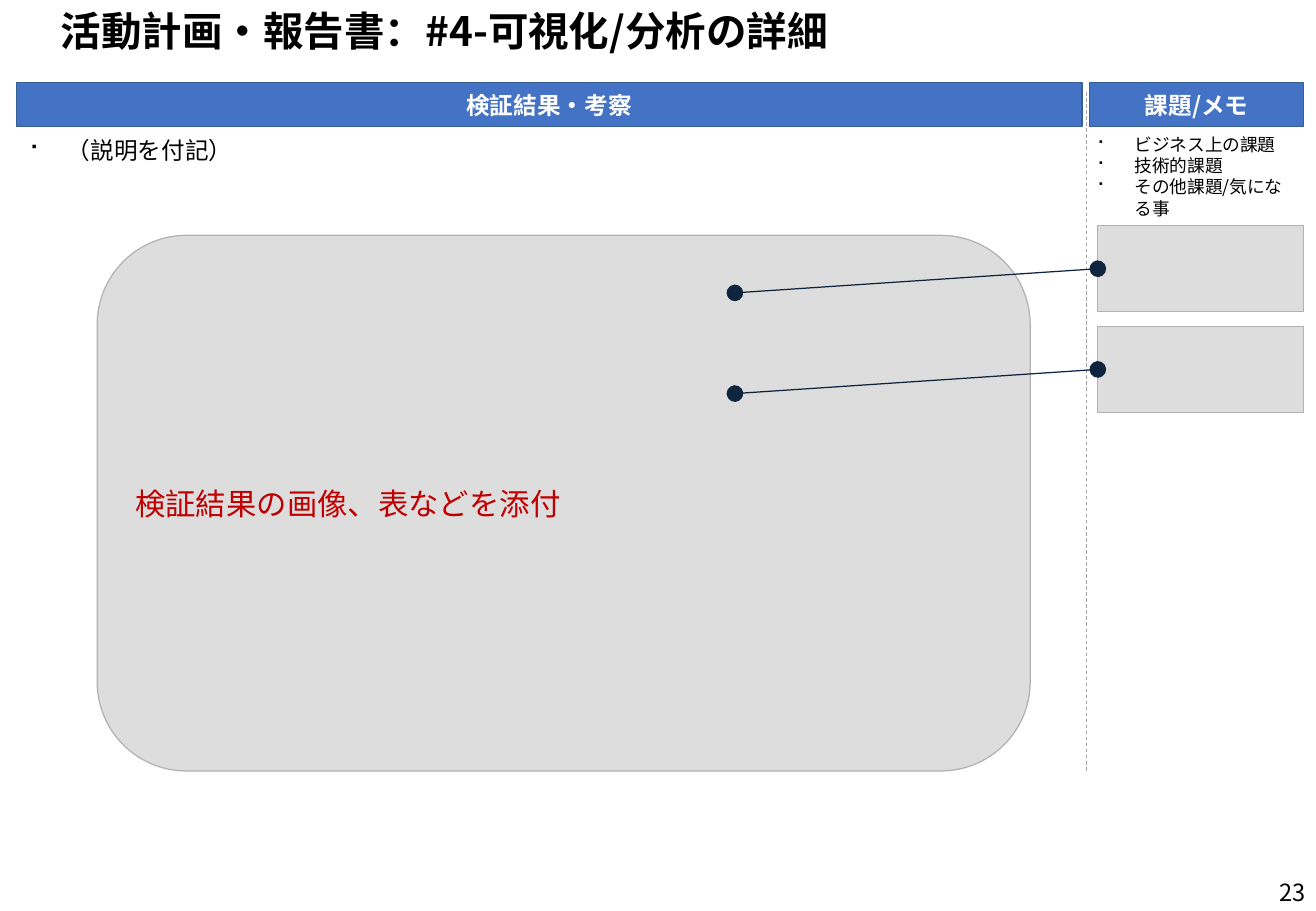
"""Build the slide on visualisation and analysis details."""
from dataclasses import dataclass

from lxml import etree
from pptx import Presentation
from pptx.dml.color import RGBColor
from pptx.enum import dml, shapes, text
from pptx.oxml import ns
from pptx.util import Pt

FACE = "Noto Sans CJK JP"
KIND = shapes.MSO_SHAPE
ALIGN = text.PP_ALIGN
MID = text.MSO_ANCHOR.MIDDLE
TOP = text.MSO_ANCHOR.TOP
STEP = 59.7


@dataclass
class Area:
    left: float
    top: float
    width: float
    height: float


@dataclass
class Words:
    lines: list[str]
    size: float
    color: str = "000000"
    bold: bool = False
    align: ALIGN = ALIGN.LEFT
    anchor: text.MSO_ANCHOR = MID
    wrap: bool = True
    pitch: float = 0


@dataclass
class Panel:
    area: Area
    fill: str
    edge: str
    kind: KIND = KIND.RECTANGLE
    words: Words | None = None


@dataclass
class Label:
    area: Area
    words: Words


def head(left: float, width: float, title: str) -> Panel:
    """Describe a blue column header."""
    words = Words([title], 14, "FFFFFF", True, ALIGN.CENTER)
    return Panel(Area(left, 49, width, 26), "4472C4", "376092", words=words)


RESULT = Panel(Area(57.6, 139.5, 553, 317.5), "DDDDDD", "B2B2B2", KIND.ROUNDED_RECTANGLE,
               Words(["検証結果の画像、表などを添付"], 18, "C00000", wrap=False))
NOTES = [Panel(Area(650.7, 133.7 + STEP * row, 122, 51.2), "DDDDDD", "B2B2B2")
         for row in range(2)]
HEADS = [head(645.8, 127, "課題/メモ"), head(9.8, 631.5, "検証結果・考察")]
LABELS = [
    Label(Area(599, 514, 182.2, 29), Words(["23"], 14, align=ALIGN.RIGHT)),
    Label(Area(5, 0, 770, 36), Words(["　活動計画・報告書：#4-可視化/分析の詳細"], 24, bold=True)),
    Label(Area(10, 75.6, 596, 41), Words(["（説明を付記）"], 14, anchor=TOP, pitch=18)),
    Label(Area(643, 75.6, 132.5, 58.3),
          Words(["ビジネス上の課題", "技術的課題", "その他課題/気になる事"], 10.5,
                anchor=TOP, pitch=12.6)),
]


def paint(code: str) -> RGBColor:
    """Turn a hex string into a colour."""
    return RGBColor.from_string(code)


def child(base, tag: str, **attrs: str) -> None:
    """Append a DrawingML element."""
    etree.SubElement(base, ns.qn(tag), attrs)


def write(frame, words: Words) -> None:
    """Fill a text frame, with bullets where a line pitch is given."""
    frame.word_wrap = words.wrap
    frame.vertical_anchor = words.anchor
    for i, line in enumerate(words.lines):
        para = frame.paragraphs[0] if i == 0 else frame.add_paragraph()
        para.alignment = words.align
        if words.pitch:
            para.line_spacing = Pt(words.pitch)
            props = para._p.get_or_add_pPr()
            props.set("marL", str(Pt(22.5)))
            props.set("indent", str(Pt(-22.5)))
            child(props, "a:buFont", typeface="Wingdings")
            child(props, "a:buChar", char="■")
        run = para.add_run()
        run.text = line
        font = run.font
        font.name, font.size, font.bold = FACE, Pt(words.size), words.bold
        font.color.rgb = paint(words.color)
        child(run._r.get_or_add_rPr(), "a:ea", typeface=FACE)


def place(area: Area) -> tuple[Pt, Pt, Pt, Pt]:
    """Give the lengths of an area."""
    return Pt(area.left), Pt(area.top), Pt(area.width), Pt(area.height)


def block(slide, panel: Panel):
    """Draw a filled panel."""
    shape = slide.shapes.add_shape(panel.kind, *place(panel.area))
    shape.shadow.inherit = False
    shape.fill.solid()
    shape.fill.fore_color.rgb = paint(panel.fill)
    shape.line.color.rgb = paint(panel.edge)
    shape.line.width = Pt(0.75)
    if panel.words:
        write(shape.text_frame, panel.words)
    return shape


def rule(slide, start: tuple[float, float], end: tuple[float, float],
         color: str, width: float):
    """Draw a straight line."""
    line = slide.shapes.add_connector(
        shapes.MSO_CONNECTOR.STRAIGHT, *map(Pt, start + end))
    line.line.color.rgb = paint(color)
    line.line.width = Pt(width)
    child(line._element.spPr, "a:effectLst")
    return line


def point(slide, panel: Panel) -> None:
    """Draw a note box and its dotted pointer into the result."""
    box = block(slide, panel)
    area = panel.area
    y = area.top + area.height / 2
    line = rule(slide, (area.left, y), (435.6, y + 14.3), "0F243E", 0.75)
    line.begin_connect(box, 1)
    edge = line.line._get_or_add_ln()
    for tag in ("a:headEnd", "a:tailEnd"):
        child(edge, tag, type="oval", w="lg", len="lg")


def main() -> None:
    """Build and save the slide."""
    deck = Presentation()
    deck.slide_width, deck.slide_height = Pt(780), Pt(540)
    slide = deck.slides.add_slide(deck.slide_layouts[6])
    block(slide, RESULT)
    for label in LABELS:
        box = slide.shapes.add_textbox(*place(label.area))
        write(box.text_frame, label.words)
    split = rule(slide, (643.9, 54.7), (643.9, 457), "A6A6A6", 0.5)
    split.line.dash_style = dml.MSO_LINE.DASH
    for note in NOTES:
        point(slide, note)
    for panel in HEADS:
        block(slide, panel)
    deck.save("out.pptx")


if __name__ == "__main__":
    main()
